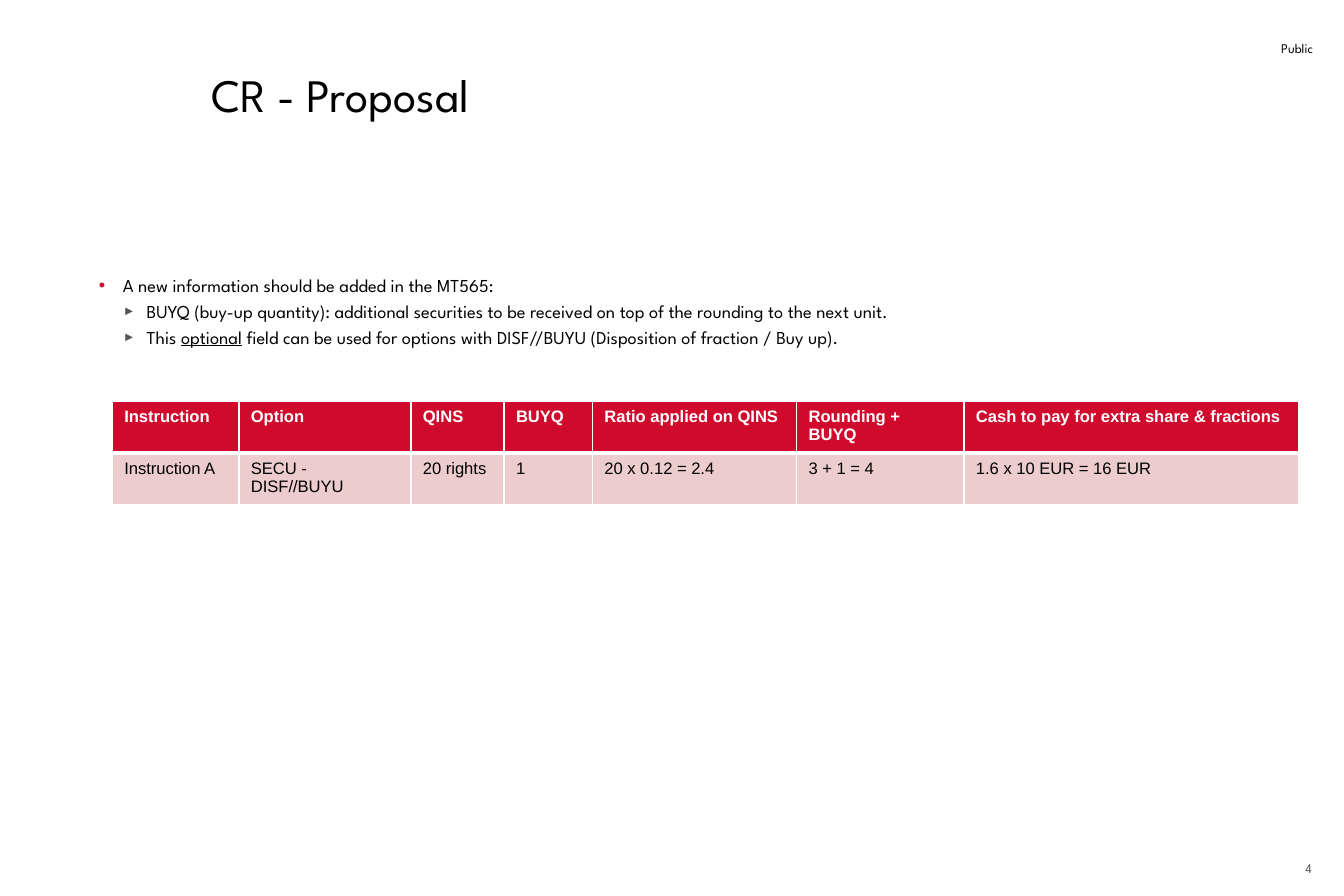
from lxml import etree
from pptx import Presentation, util as u
from pptx.dml.color import RGBColor
from pptx.enum import text
from pptx.oxml.ns import qn

PX = 9144  # 100 px to the inch
FACE = "League Spartan"
BLACK, WHITE, RED, PINK, GREY = "000000", "FFFFFF", "CF0A2C", "EDCCCD", "555555"

BULLETS = [
    (0, ["A new information should be added in the MT565:"]),
    (1, ["BUYQ (buy-up quantity): additional securities to be received "
         "on top of the rounding to the next unit."]),
    (1, ["This ", "optional", " field can be used for options with "
         "DISF//BUYU (Disposition of fraction / Buy up)."]),
]
UNDERLINED = {"optional"}
MARKS = [("•", RED, 100), ("►", GREY, 70)]

COLUMNS = [106, 144, 78, 74, 171, 140, 280]
ROWS = [38, 41]
CELLS = [
    ["Instruction", "Option", "QINS", "BUYQ", "Ratio applied on QINS",
     "Rounding + BUYQ", "Cash to pay for extra share & fractions"],
    ["Instruction A", "SECU - DISF//BUYU", "20 rights", "1",
     "20 x 0.12 = 2.4", "3 + 1 = 4", "1.6 x 10 EUR = 16 EUR"],
]


def px(length):
    return u.Emu(length * PX)


def colour(value):
    return RGBColor.from_string(value)


def assign(target, values):
    for name, value in values.items():
        setattr(target, name, value)


def add_span(para, words, size, ink, face=FACE, **values):
    span = para.add_run()
    span.text = words
    assign(span.font, {"size": u.Pt(size), "name": face, **values})
    span.font.color.rgb = colour(ink)


def add_box(page, left, top, width, height, inset=(10, 5), **values):
    """Add an empty wrapped text box and return its frame."""
    box = page.shapes.add_textbox(px(left), px(top), px(width), px(height))
    side, edge = map(px, inset)
    assign(box.text_frame, {"word_wrap": True, "margin_left": side, "margin_right": side,
                            "margin_top": edge, "margin_bottom": edge, **values})
    return box.text_frame


def add_corner_label(page, words, ink, *place, **spacing):
    """Add small right-aligned text that stands on the bottom of its box."""
    frame = add_box(page, *place, vertical_anchor=text.MSO_ANCHOR.BOTTOM)
    para = frame.paragraphs[0]
    assign(para, {"alignment": text.PP_ALIGN.RIGHT, **spacing})
    add_span(para, words, 8, ink)


def add_bullet(para, level):
    mark, ink, percent = MARKS[level]
    props = para._p.get_or_add_pPr()
    props.set("marL", str(px(20 * (level + 1))))
    props.set("indent", str(px(-20)))
    fill = etree.SubElement(props, qn("a:buClr"))
    etree.SubElement(fill, qn("a:srgbClr"), val=ink)
    etree.SubElement(props, qn("a:buSzPct"), val=str(percent * 1000))
    etree.SubElement(props, qn("a:buFont"), typeface="Arial")
    etree.SubElement(props, qn("a:buChar"), char=mark)


def add_bullet_list(page, *place):
    frame = add_box(page, *place)
    for number, (level, pieces) in enumerate(BULLETS):
        para = frame.add_paragraph() if number else frame.paragraphs[0]
        para.level = level
        add_bullet(para, level)
        if number:
            para.space_before = u.Pt(2.2)
        for piece in pieces:
            add_span(para, piece, 11, BLACK, underline=piece in UNDERLINED)


def add_borders(cell, bottom):
    props = cell._tc.get_or_add_tcPr()
    for side, points in {"L": 1, "R": 1, "T": 1, "B": bottom}.items():
        line = etree.SubElement(props, qn(f"a:ln{side}"), w=str(u.Pt(points)))
        fill = etree.SubElement(line, qn("a:solidFill"))
        etree.SubElement(fill, qn("a:srgbClr"), val=WHITE)


def add_table(page, left, top):
    frame = page.shapes.add_table(len(ROWS), len(COLUMNS), px(left), px(top),
                                  px(sum(COLUMNS)), px(sum(ROWS)))
    table = frame.table
    table.horz_banding = False
    for column, width in zip(table.columns, COLUMNS):
        column.width = px(width)
    for number, (row, height) in enumerate(zip(table.rows, ROWS)):
        row.height = px(height)
        header = number == 0
        for cell, words in zip(row.cells, CELLS[number]):
            add_borders(cell, 3 if header else 1)
            cell.fill.solid()
            cell.fill.fore_color.rgb = colour(RED if header else PINK)
            add_span(cell.text_frame.paragraphs[0], words, 10,
                     WHITE if header else BLACK, "Arial", bold=header)


def main():
    deck = Presentation()
    assign(deck, {"slide_width": px(1125), "slide_height": px(750)})
    page = deck.slides.add_slide(deck.slide_layouts[6])
    add_corner_label(page, "Public", BLACK, 346, 13, 763, 39, line_spacing=1.1)
    title = add_box(page, 177, 55, 797, 79, inset=(0, 0))
    add_span(title.paragraphs[0], "CR - Proposal", 28, BLACK)
    add_bullet_list(page, 73, 225, 866, 488)
    add_corner_label(page, "4", GREY, 1066, 714, 42, 24)
    add_table(page, 94, 336)
    deck.save("out.pptx")


if __name__ == "__main__":
    main()
